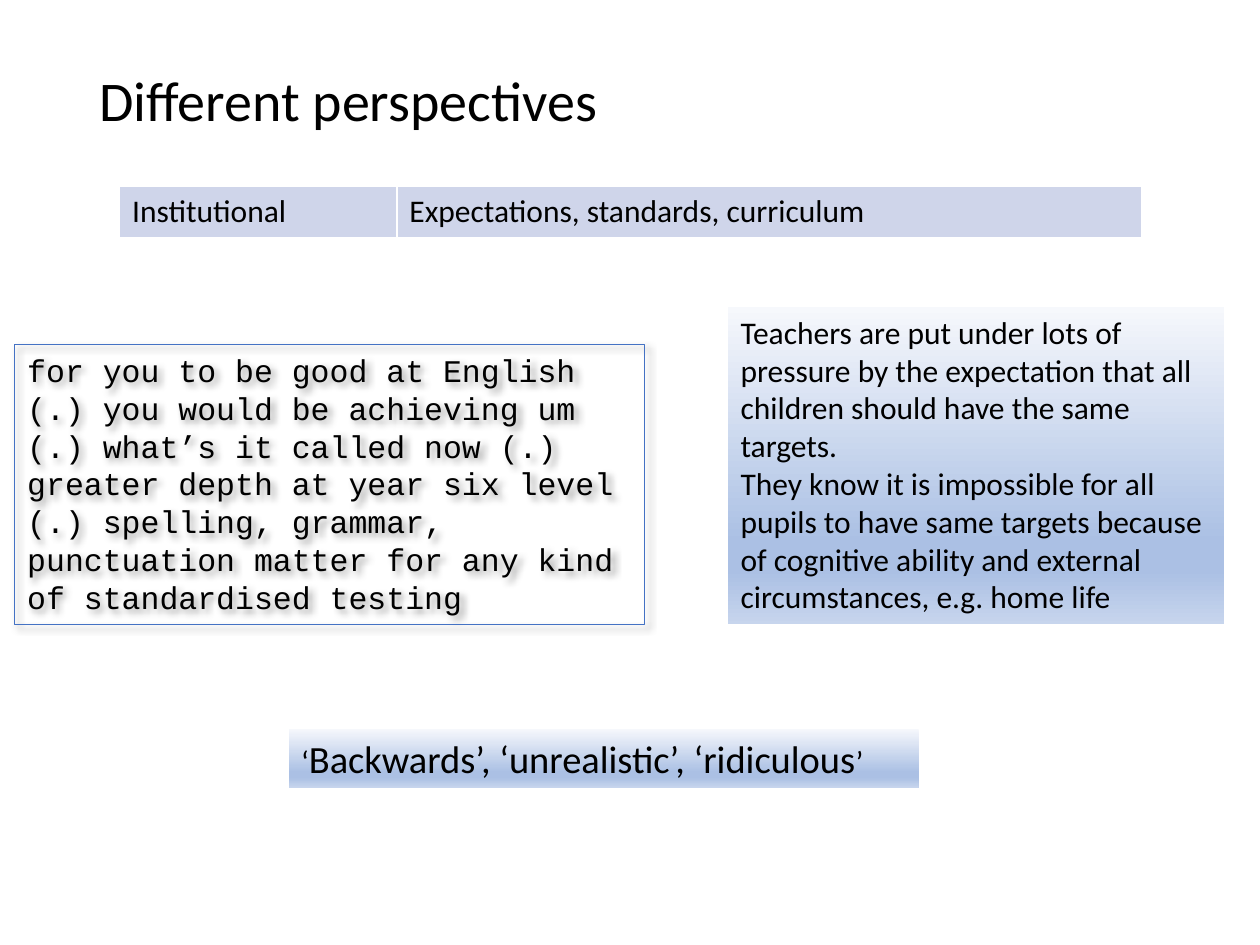
from lxml.etree import SubElement
from pptx import Presentation
from pptx.dml.color import RGBColor
from pptx.enum.shapes import MSO_SHAPE
from pptx.enum.text import MSO_ANCHOR, MSO_AUTO_SIZE, PP_ALIGN
from pptx.oxml.ns import qn
from pptx.util import Cm, Pt

BLACK = RGBColor(0x00, 0x00, 0x00)
WHITE = RGBColor(0xFF, 0xFF, 0xFF)
BLUE = RGBColor(0x44, 0x72, 0xC4)
LAVENDER = RGBColor(0xCF, 0xD5, 0xEA)
PALE_BLUE = RGBColor(0xF6, 0xF8, 0xFC)
MID_BLUE = RGBColor(0xAB, 0xC0, 0xE4)
LIGHT_BLUE = RGBColor(0xC7, 0xD5, 0xED)
GRADIENT = [(0, PALE_BLUE), (74, MID_BLUE), (83, MID_BLUE), (100, LIGHT_BLUE)]


def add_color(parent, color):
    return SubElement(parent, qn("a:srgbClr"), val=str(color))


class SlideBuilder:
    body_font = "Calibri"
    quote_font = "Courier New"
    body_size = 18
    title_size = 32

    def __init__(self, slide):
        self.slide = slide

    def style(self, paragraph, name=body_font, size=body_size):
        paragraph.alignment = PP_ALIGN.LEFT
        paragraph.font.name = name
        paragraph.font.size = Pt(size)
        paragraph.font.color.rgb = BLACK

    def title(self, text, left, top, width, height):
        shape = self.slide.shapes.add_textbox(Cm(left), Cm(top), Cm(width), Cm(height))
        frame = shape.text_frame
        frame.word_wrap = True
        frame.vertical_anchor = MSO_ANCHOR.MIDDLE
        paragraph = frame.paragraphs[0]
        paragraph.text = text
        paragraph.line_spacing = 0.9
        self.style(paragraph, size=self.title_size)

    def table(self, texts, left, top, widths, height):
        table = self.slide.shapes.add_table(
            1, len(texts), Cm(left), Cm(top), Cm(sum(widths)), Cm(height)
        ).table
        table.first_row = False
        table.horz_banding = False
        for column, width, cell, text in zip(table.columns, widths, table.rows[0].cells, texts):
            column.width = Cm(width)
            cell.text = text
            self.style(cell.text_frame.paragraphs[0])
            self.borders(cell)
            cell.fill.solid()
            cell.fill.fore_color.rgb = LAVENDER

    def borders(self, cell):
        properties = cell._tc.get_or_add_tcPr()
        for side in ("L", "R", "T", "B"):
            line = SubElement(properties, qn(f"a:ln{side}"), w=str(Pt(1)))
            add_color(SubElement(line, qn("a:solidFill")), WHITE)

    def box(self, texts, left, top, width, height, font=body_font):
        shape = self.slide.shapes.add_shape(
            MSO_SHAPE.RECTANGLE, Cm(left), Cm(top), Cm(width), Cm(height)
        )
        shape.shadow.inherit = False
        frame = shape.text_frame
        frame.word_wrap = True
        frame.auto_size = MSO_AUTO_SIZE.SHAPE_TO_FIT_TEXT
        frame.vertical_anchor = MSO_ANCHOR.TOP
        frame.text = "\n".join(texts)
        for paragraph in frame.paragraphs:
            self.style(paragraph, font)
        return shape

    def quote_box(self, text, left, top, width, height):
        shape = self.box([text], left, top, width, height, self.quote_font)
        shape.fill.background()
        shape.line.color.rgb = BLUE
        shape.line.width = Pt(0.75)
        effects = shape._element.spPr.find(qn("a:effectLst"))
        shadow = SubElement(
            effects, qn("a:outerShdw"), blurRad=str(Pt(4)), dist=str(Pt(3)),
            dir="2700000", algn="tl", rotWithShape="0",
        )
        SubElement(add_color(shadow, BLACK), qn("a:alpha"), val="40000")

    def gradient_box(self, texts, left, top, width, height):
        shape = self.box(texts, left, top, width, height)
        shape.line.fill.background()
        shape.fill.gradient()
        shape.fill.gradient_angle = 270
        stops = shape._element.spPr.find(qn("a:gradFill")).find(qn("a:gsLst"))
        for stop in list(stops):
            stops.remove(stop)
        for position, color in GRADIENT:
            add_color(SubElement(stops, qn("a:gs"), pos=str(position * 1000)), color)
        return shape

    def highlight_box(self, runs, left, top, width, height):
        shape = self.gradient_box([""], left, top, width, height)
        paragraph = shape.text_frame.paragraphs[0]
        for text, size in runs:
            run = paragraph.add_run()
            run.text = text
            run.font.size = Pt(size)


def main():
    presentation = Presentation()
    presentation.slide_width = Cm(25.4)
    presentation.slide_height = Cm(19.05)
    builder = SlideBuilder(presentation.slides.add_slide(presentation.slide_layouts[6]))

    builder.title("Different perspectives", 1.75, 0.97, 21.9, 2.21)
    builder.table(
        ["Institutional", "Expectations, standards, curriculum"],
        2.41, 3.76, [5.59, 15.01], 1.03,
    )
    builder.quote_box(
        "for you to be good at English (.) you would be achieving um (.) what’s it "
        "called now (.) greater depth at year six level (.) spelling, grammar, "
        "punctuation matter for any kind of standardised testing",
        0.3, 6.95, 12.7, 5.64,
    )
    builder.gradient_box(
        [
            "Teachers are put under lots of pressure by the expectation that all "
            "children should have the same targets.",
            "They know it is impossible for all pupils to have same targets because "
            "of cognitive ability and external circumstances, e.g. home life",
        ],
        14.68, 6.18, 10, 6.41,
    )
    builder.highlight_box(
        [("‘", 18), ("Backwards’, ‘unrealistic’, ‘ridiculous", 22), ("’", 18)],
        5.82, 14.69, 12.7, 1.19,
    )
    presentation.save("out.pptx")


if __name__ == "__main__":
    main()
